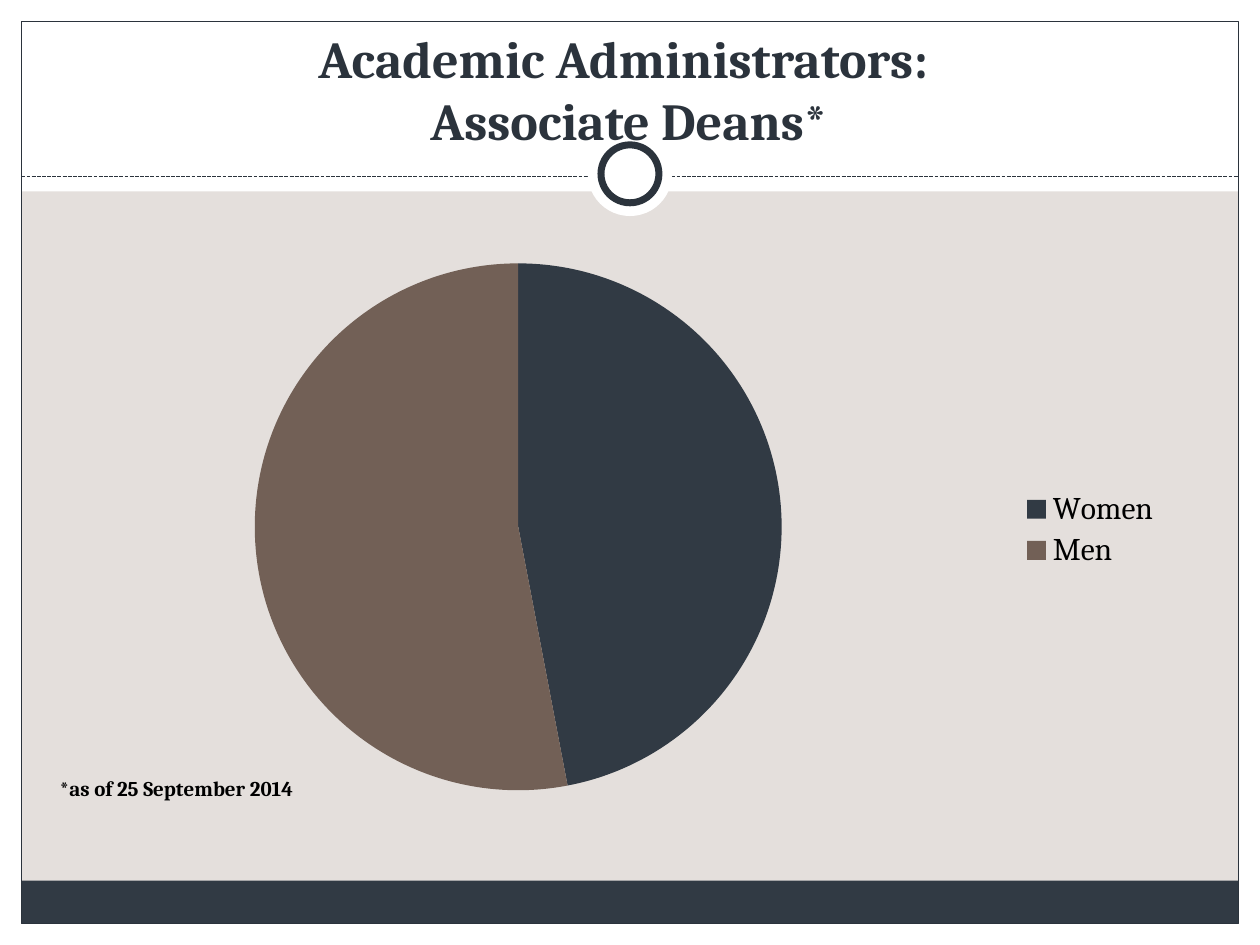
from dataclasses import dataclass
from typing import Optional

from lxml import etree
from pptx import Presentation
from pptx import util as u
from pptx.chart import data as chart_data
from pptx.dml.color import RGBColor
from pptx.enum import chart as ch, dml, shapes, text
from pptx.oxml import parse_xml
from pptx.oxml.ns import nsdecls, qn

WIDTH, HEIGHT = 10, 7.5
MARGIN = 0.17
HEADER = 1.52
RULE_Y = 1.4
FONT = "Cambria"
COLOURS = {
    "paper": "FFFFFF",
    "ground": "E4DFDC",
    "slate": "313A44",
    "ink": "2B333C",
    "brown": "726056",
    "text": "000000",
}


@dataclass
class Panel:
    left: float
    top: float
    width: float
    height: float
    fill: Optional[str] = None
    line_width: float = 0
    kind: shapes.MSO_SHAPE = shapes.MSO_SHAPE.RECTANGLE


def disc(centre_y: float, size: float, line_width: float = 0) -> Panel:
    """A white circle centred across the slide."""
    return Panel((WIDTH - size) / 2, centre_y - size / 2, size, size,
                 "paper", line_width, shapes.MSO_SHAPE.OVAL)


FRAME_WIDTH = WIDTH - 2 * MARGIN
FRAME = [
    Panel(0, HEIGHT - MARGIN, WIDTH, MARGIN, "paper"),
    Panel(0, 0, WIDTH, HEADER, "paper"),
    Panel(0, 0, MARGIN, HEIGHT, "paper"),
    Panel(WIDTH - MARGIN, 0, MARGIN, HEIGHT, "paper"),
    Panel(MARGIN, 6.99, FRAME_WIDTH, 0.34, "slate"),
    Panel(MARGIN, MARGIN, FRAME_WIDTH, HEIGHT - 2 * MARGIN, line_width=0.75),
]
RING = [disc(1.38, 0.67), disc(1.38, 0.46, 4)]


def colour(name: str) -> RGBColor:
    return RGBColor.from_string(COLOURS[name])


def style_font(font, size: float, name: str, bold: bool = False) -> None:
    font.name, font.size, font.bold = FONT, u.Pt(size), bold
    font.color.rgb = colour(name)


def draw_panel(slide, panel: Panel) -> None:
    shape = slide.shapes.add_shape(
        panel.kind, *map(u.Inches, (panel.left, panel.top, panel.width, panel.height)))
    shape.shadow.inherit = False
    if panel.fill:
        shape.fill.solid()
        shape.fill.fore_color.rgb = colour(panel.fill)
    else:
        shape.fill.background()
    if panel.line_width:
        shape.line.color.rgb = colour("ink")
        shape.line.width = u.Pt(panel.line_width)
    else:
        shape.line.fill.background()


def draw_header_rule(slide) -> None:
    rule = slide.shapes.add_connector(
        shapes.MSO_CONNECTOR.STRAIGHT,
        *map(u.Inches, (MARGIN, RULE_Y, WIDTH - MARGIN, RULE_Y)))
    rule.line.color.rgb = colour("ink")
    rule.line.width = u.Pt(0.75)
    rule.line.dash_style = dml.MSO_LINE.SQUARE_DOT
    etree.SubElement(rule._element.spPr, qn("a:effectLst"))


def place(element, after: str, **shares: float) -> None:
    """Put a chart part at shares of the chart's size, after the named child."""
    for automatic in element.findall(qn("c:layout")):
        element.remove(automatic)
    inner = '<c:layoutTarget val="inner"/>' if element.tag == qn("c:plotArea") else ""
    modes = '<c:xMode val="edge"/><c:yMode val="edge"/>'
    values = "".join(f'<c:{key} val="{value}"/>' for key, value in shares.items())
    layout = parse_xml(f'<c:layout {nsdecls("c")}><c:manualLayout>{inner}{modes}'
                       f'{values}</c:manualLayout></c:layout>')
    previous = element.find(qn(after)) if after else None
    if previous is None:
        element.insert(0, layout)
    else:
        previous.addnext(layout)


def draw_deans_chart(slide) -> None:
    deans = chart_data.CategoryChartData()
    deans.categories = ["Women", "Men"]
    deans.add_series("Series 1", (47, 53))
    chart = slide.shapes.add_chart(
        ch.XL_CHART_TYPE.PIE, *map(u.Inches, (MARGIN, 1.5, 9.17, 4.92)), deans).chart
    style_font(chart.font, 10, "text")

    chart.has_title = True
    note = chart.chart_title.text_frame
    note.text = "*as of 25 September 2014"
    style_font(note.paragraphs[0].runs[0].font, 12, "text", bold=True)
    chart.chart_title.include_in_layout = False
    place(chart.chart_title._element, "c:tx", x=0.03, y=0.94)

    chart.has_legend = True
    chart.legend.position = ch.XL_LEGEND_POSITION.RIGHT
    chart.legend.include_in_layout = False
    style_font(chart.legend.font, 18, "text")
    place(chart.legend._element, "c:legendPos", x=0.86, y=0.48, w=0.13, h=0.14)

    pie = chart.plots[0]
    pie.vary_by_categories = True
    for index, name in enumerate(("slate", "brown")):
        slice_format = pie.series[0].points[index].format
        slice_format.fill.solid()
        slice_format.fill.fore_color.rgb = colour(name)
        slice_format.line.fill.background()
    place(chart._chartSpace.chart.plotArea, "", x=0.2, y=0.12, w=0.46, h=0.85)


def draw_title(slide) -> None:
    box = slide.shapes.add_textbox(*map(u.Inches, (0.33, 0.42, 9.33, 0.83)))
    frame = box.text_frame
    frame.word_wrap = True
    frame.vertical_anchor = text.MSO_ANCHOR.BOTTOM
    heading = frame.paragraphs[0]
    heading.text = "Academic Administrators: \vAssociate Deans*"
    heading.alignment = text.PP_ALIGN.CENTER
    for run in heading.runs:
        style_font(run.font, 29.7, "ink", bold=True)


def main() -> None:
    deck = Presentation()
    deck.slide_width, deck.slide_height = u.Inches(WIDTH), u.Inches(HEIGHT)
    slide = deck.slides.add_slide(deck.slide_layouts[6])
    slide.background.fill.solid()
    slide.background.fill.fore_color.rgb = colour("ground")
    for panel in FRAME:
        draw_panel(slide, panel)
    draw_header_rule(slide)
    for panel in RING:
        draw_panel(slide, panel)
    draw_deans_chart(slide)
    draw_title(slide)
    deck.save("out.pptx")


if __name__ == "__main__":
    main()
